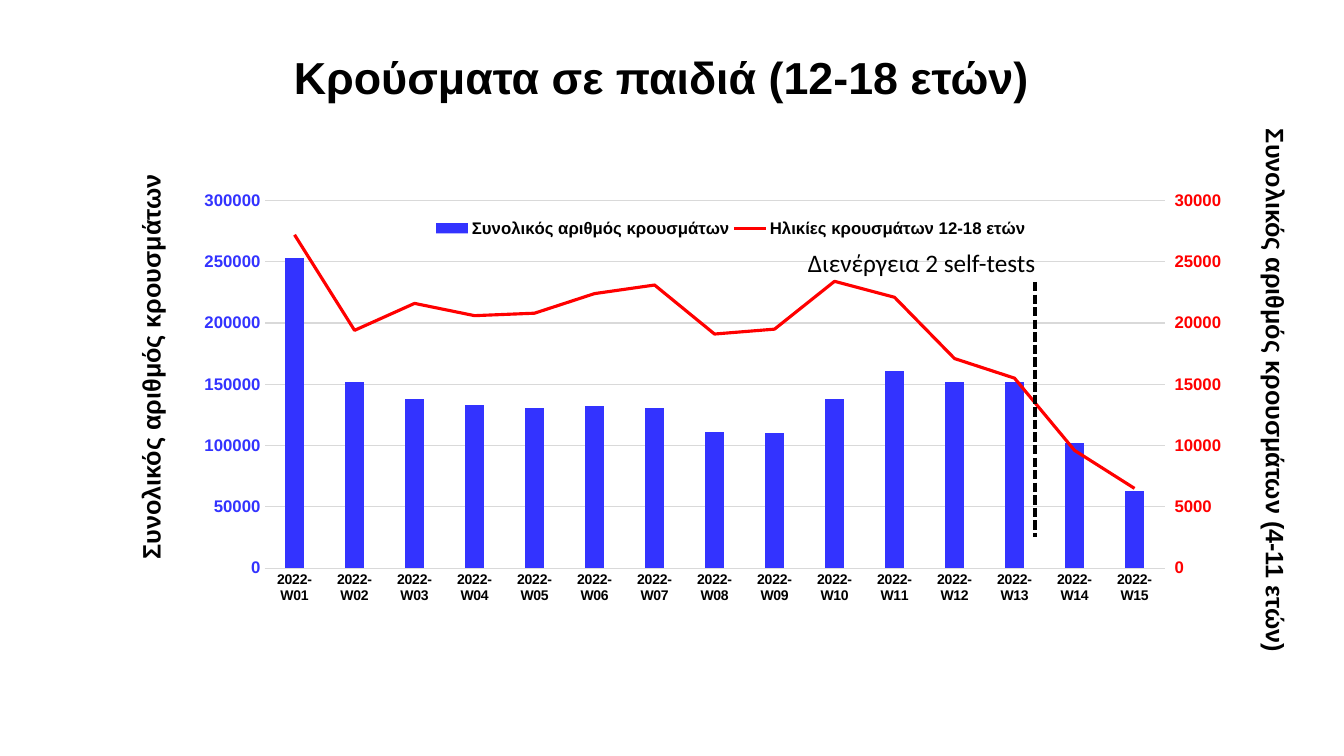
from copy import deepcopy

from lxml import etree
from pptx import Presentation, util as u
from pptx.chart import axis, data
from pptx.dml.color import RGBColor
from pptx.enum import chart as kinds, dml, shapes, text
from pptx.oxml import parse_xml
from pptx.oxml.ns import nsdecls, qn

EMU_PER_PX = 914400 / 100.8
BLACK = RGBColor(0x00, 0x00, 0x00)
BLUE = RGBColor(0x33, 0x33, 0xFF)
RED = RGBColor(0xFF, 0x00, 0x00)
GREY = RGBColor(0xD9, 0xD9, 0xD9)

TOTAL_CASES = [253000, 152000, 138000, 133000, 131000, 132000, 131000, 111000,
               110000, 138000, 161000, 152000, 152000, 102000, 63000]
TEEN_CASES = [27200, 19400, 21600, 20600, 20800, 22400, 23100, 19100,
              19500, 23400, 22100, 17100, 15500, 9600, 6500]


def px(*lengths):
    return [u.Emu(round(length * EMU_PER_PX)) for length in lengths]


def set_font(font, size, color, bold=True, name="Arial"):
    font.size, font.bold, font.name = u.Pt(size), bold, name
    font.color.rgb = color


deck = Presentation()
deck.slide_width, deck.slide_height = px(1344, 756)
page = deck.slides.add_slide(deck.slide_layouts[6])

# Columns for all cases
cases = data.CategoryChartData(number_format="General")
cases.categories = [f"2022-W{week:02}" for week in range(1, 16)]
cases.add_series("Συνολικός αριθμός κρουσμάτων", TOTAL_CASES)
cases.add_series("Ηλικίες κρουσμάτων 12-18 ετών", TEEN_CASES)
chart = page.shapes.add_chart(
    kinds.XL_CHART_TYPE.COLUMN_CLUSTERED, *px(183, 182, 1059, 463), cases).chart
chart.has_title = False
set_font(chart.font, 10, BLACK, False, "Calibri")
columns = chart.plots[0]
columns.gap_width = 219
columns.vary_by_categories = False
fill = columns.series[0].format.fill
fill.solid()
fill.fore_color.rgb = BLUE

weeks, totals = chart.category_axis, chart.value_axis
set_font(weeks.tick_labels.font, 10, BLACK)
weeks.format.line.color.rgb = GREY
weeks.format.line.width = u.Pt(0.75)
set_font(totals.tick_labels.font, 12, BLUE)
totals.minimum_scale, totals.maximum_scale, totals.major_unit = 0, 300000, 50000
totals.major_gridlines.format.line.color.rgb = GREY
totals.major_gridlines.format.line.width = u.Pt(0.75)
totals.format.line.fill.background()
for scale in (weeks, totals):
    scale.major_tick_mark = kinds.XL_TICK_MARK.NONE
    scale.minor_tick_mark = kinds.XL_TICK_MARK.NONE

# The second series becomes a line on its own pair of axes
plot_area = weeks._element.getparent()
bar_chart = plot_area.find(qn("c:barChart"))
teen_series = bar_chart.findall(qn("c:ser"))[1]
for bar_only in teen_series.findall(qn("c:invertIfNegative")):
    teen_series.remove(bar_only)
line_chart = parse_xml(
    f'<c:lineChart {nsdecls("c")}><c:grouping val="standard"/><c:varyColors val="0"/>'
    '<c:marker val="1"/><c:axId val="5001"/><c:axId val="5002"/></c:lineChart>')
line_chart.insert(2, teen_series)
bar_chart.addnext(line_chart)

week_copy = deepcopy(weeks._element)
teen_copy = deepcopy(totals._element)
totals._element.addnext(teen_copy)
teen_copy.addnext(week_copy)
for element, own, other in ((week_copy, "5001", "5002"), (teen_copy, "5002", "5001")):
    element.find(qn("c:axId")).set("val", own)
    element.find(qn("c:crossAx")).set("val", other)
teen_copy.find(qn("c:axPos")).set("val", "r")
axis.CategoryAxis(week_copy).visible = False
axis.CategoryAxis(week_copy).crosses = kinds.XL_AXIS_CROSSES.MINIMUM
teens = axis.ValueAxis(teen_copy)
for crossing in teen_copy.findall(qn("c:crosses")):
    crossing.set("val", "max")
teens.has_major_gridlines = False
teens.maximum_scale, teens.major_unit = 30000, 5000
teens.major_tick_mark = kinds.XL_TICK_MARK.OUTSIDE
set_font(teens.tick_labels.font, 12, RED)

teen_line = chart.plots[1].series[0]
teen_line.smooth = False
teen_line.marker.style = kinds.XL_MARKER_STYLE.NONE
teen_line.format.line.color.rgb = RED
teen_line.format.line.width = u.Pt(2.25)

chart.has_legend = True
legend = chart.legend
legend.position = kinds.XL_LEGEND_POSITION.BOTTOM
legend.include_in_layout = False
set_font(legend.font, 12, BLACK)

# Fixed places of the plot and the legend, as shares of the chart
for owner, target, places in (
        (plot_area, "inner", (0.077, 0.04, 0.85, 0.794)),
        (legend._element, None, (0.235, 0.07, 0.565, 0.06))):
    for old in owner.findall(qn("c:layout")):
        owner.remove(old)
    layout = etree.Element(qn("c:layout"))
    manual = etree.SubElement(layout, qn("c:manualLayout"))
    settings = [("layoutTarget", target)] if target else []
    settings += [("xMode", "edge"), ("yMode", "edge"), *zip("xywh", places)]
    for tag, value in settings:
        etree.SubElement(manual, qn(f"c:{tag}")).set("val", str(value))
    if target:
        owner.insert(0, layout)
    else:
        owner.find(qn("c:legendPos")).addnext(layout)

# Start of the self-test rule
marker = page.shapes.add_connector(
    shapes.MSO_CONNECTOR.STRAIGHT, *px(1035, 282, 1035, 537))
marker.line.color.rgb = BLACK
marker.line.width = u.Pt(2.25)
marker.line.dash_style = dml.MSO_LINE.SQUARE_DOT
etree.SubElement(marker._element.spPr, qn("a:effectLst"))

# Title, axis titles and the note on the marker
for words, place, turn, size, bold, name in (
        ("Κρούσματα σε παιδιά (12-18 ετών)", (284, 45, 761, 65), 0, 32, True, "Arial"),
        ("Συνολικός αριθμός κρουσμάτων", (-54, 345, 409, 40), 270, 18, True, "Arial"),
        ("Συνολικός αριθμός κρουσμάτων (4-11 ετών)", (1002, 373, 548, 40), 90, 18, True, "Arial"),
        ("Διενέργεια 2 self-tests", (798, 242, 270, 40), 0, 18, False, "Calibri")):
    box = page.shapes.add_textbox(*px(*place))
    box.rotation = turn
    frame = box.text_frame
    frame.word_wrap = False
    frame.auto_size = text.MSO_AUTO_SIZE.SHAPE_TO_FIT_TEXT
    frame.text = words
    set_font(frame.paragraphs[0].runs[0].font, size, BLACK, bold, name)

deck.save("out.pptx")
